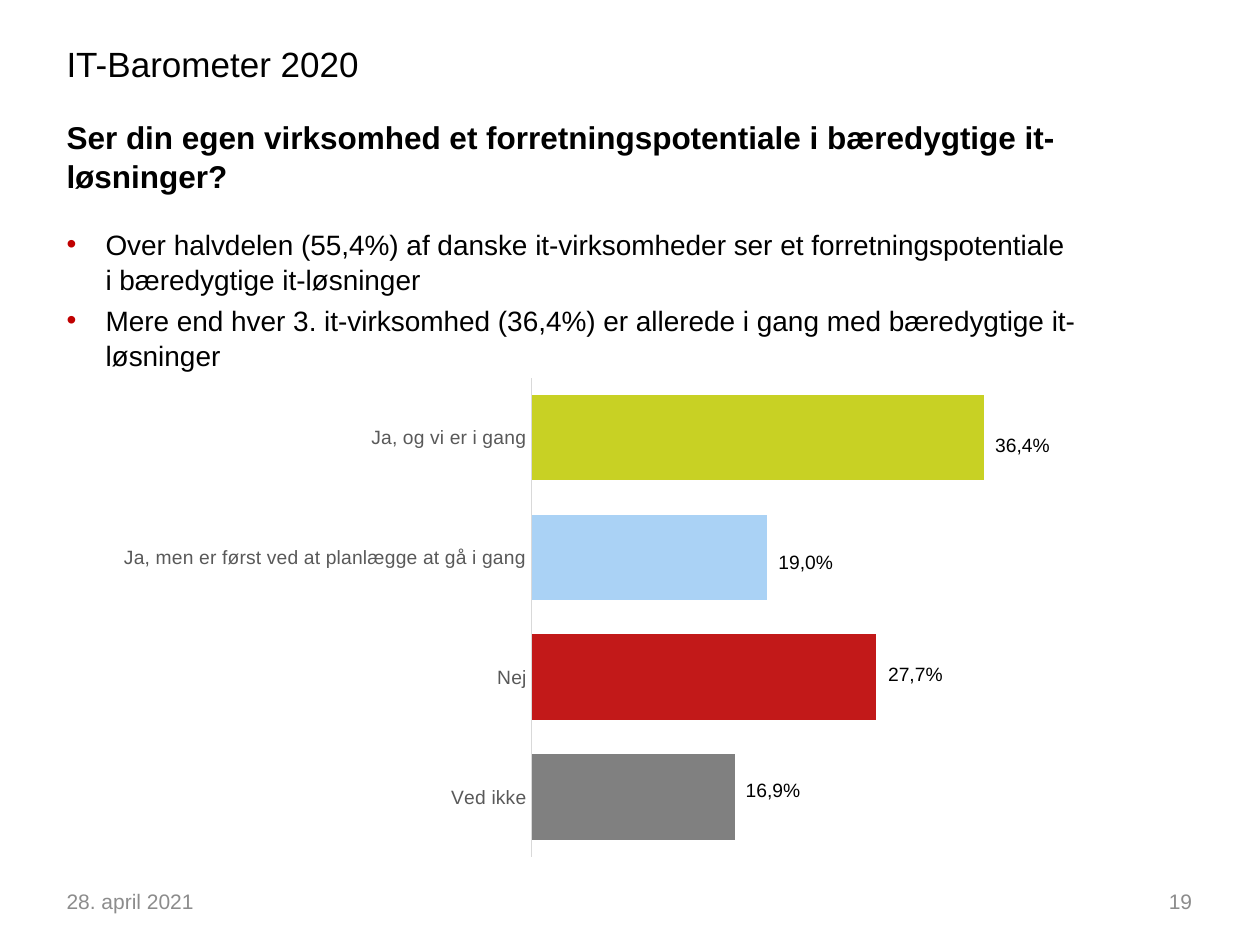
from lxml import etree
from pptx import Presentation
from pptx import util as u
from pptx.chart.data import CategoryChartData
from pptx.dml.color import RGBColor
from pptx.enum import chart as c
from pptx.enum import text as t
from pptx.oxml import parse_xml
from pptx.oxml.ns import nsdecls, qn

COLORS = {
    "text": "000000", "footer": "8C8C8C", "bullet": "C00000",
    "axis_text": "595959", "axis_line": "D9D9D9",
    "lime": "C8D124", "sky": "AAD2F5", "red": "C21919", "gray": "808080",
}


class SlideBuilder:
    """Holds the style and the slide being built."""

    font_name = "Arial"

    def __init__(self, slide):
        self.slide = slide

    def color(self, name):
        return RGBColor.from_string(COLORS[name])

    def style_font(self, font, size, color, bold=False):
        font.name = self.font_name
        font.size = u.Pt(size)
        font.bold = bold
        font.color.rgb = self.color(color)

    def text_box(self, box, lines, size, color="text", bold=False, wrap=True,
                 align=t.PP_ALIGN.LEFT, anchor=t.MSO_ANCHOR.TOP,
                 bullets=False, line_spacing=1.0):
        shape = self.slide.shapes.add_textbox(*map(u.Inches, box))
        frame = shape.text_frame
        frame.word_wrap = wrap
        frame.vertical_anchor = anchor
        for index, line in enumerate(lines):
            paragraph = frame.paragraphs[0] if index == 0 else frame.add_paragraph()
            if bullets:
                self.add_bullet(paragraph)
            paragraph.alignment = align
            paragraph.line_spacing = line_spacing
            if index:
                paragraph.space_before = u.Pt(0.2 * size)
            run = paragraph.add_run()
            run.text = line
            self.style_font(run.font, size, color, bold)

    def add_bullet(self, paragraph):
        properties = paragraph._p.get_or_add_pPr()
        indent = u.Inches(0.31)
        properties.set("marL", str(indent))
        properties.set("indent", str(-indent))
        bullet_color = etree.SubElement(properties, qn("a:buClr"))
        etree.SubElement(bullet_color, qn("a:srgbClr"), val=COLORS["bullet"])
        etree.SubElement(properties, qn("a:buFont"), typeface=self.font_name)
        etree.SubElement(properties, qn("a:buChar"), char="•")

    def bar_chart(self, box, bars, plot_area):
        data = CategoryChartData()
        data.categories = [label for label, _, _ in bars]
        data.add_series("Series 1", [value for _, value, _ in bars])
        chart = self.slide.shapes.add_chart(
            c.XL_CHART_TYPE.BAR_CLUSTERED, *map(u.Inches, box), data).chart
        chart.has_legend = False
        chart.has_title = False
        self.style_font(chart.font, 10, "text")

        # Bars, one colour each
        plot = chart.plots[0]
        plot.gap_width = 40
        plot.overlap = -25
        plot.vary_by_categories = False
        series = plot.series[0]
        for index, (_, _, color) in enumerate(bars):
            fill = series.points[index].format.fill
            fill.solid()
            fill.fore_color.rgb = self.color(color)

        # Axes
        category_axis = chart.category_axis
        category_axis.major_tick_mark = c.XL_TICK_MARK.NONE
        category_axis.format.line.color.rgb = self.color("axis_line")
        category_axis.format.line.width = u.Pt(0.75)
        self.style_font(category_axis.tick_labels.font, 11, "axis_text")
        value_axis = chart.value_axis
        value_axis.minimum_scale = 0
        value_axis.maximum_scale = 110
        value_axis.has_major_gridlines = False
        value_axis.visible = False

        # Fixed inner plot area, as fractions of the chart
        sizes = "".join(f'<c:{key} val="{value}"/>'
                        for key, value in zip("xywh", plot_area))
        layout = parse_xml(
            f'<c:layout {nsdecls("c")}><c:manualLayout>'
            '<c:layoutTarget val="inner"/><c:xMode val="edge"/>'
            f'<c:yMode val="edge"/>{sizes}</c:manualLayout></c:layout>')
        area = chart._chartSpace.chart.plotArea
        for old_layout in area.findall(qn("c:layout")):
            area.remove(old_layout)
        area.insert(0, layout)


def main():
    presentation = Presentation()
    presentation.slide_width = u.Inches(10)
    presentation.slide_height = u.Inches(7.5)
    slide = presentation.slides.add_slide(presentation.slide_layouts[6])
    builder = SlideBuilder(slide)

    # Chart, listed from the bottom bar up
    builder.bar_chart((0.84, 2.92, 7.46, 3.96), [
        ("Ved ikke", 45, "gray"),
        ("Nej", 76, "red"),
        ("Ja, men er først ved at planlægge at gå i gang", 52, "sky"),
        ("Ja, og vi er i gang", 100, "lime"),
    ], plot_area=(0.453, 0.02, 0.53, 0.96))

    # Headings and findings
    builder.text_box((0.43, 0.29, 3.17, 0.4), ["IT-Barometer 2020"], 20)
    builder.text_box(
        (0.43, 0.87, 9, 0.55),
        ["Ser din egen virksomhed et forretningspotentiale i bæredygtige it-løsninger?"],
        18, bold=True, line_spacing=1.05)
    builder.text_box((0.43, 1.74, 8.23, 1.22), [
        "Over halvdelen (55,4%) af danske it-virksomheder ser et "
        "forretningspotentiale i bæredygtige it-løsninger",
        "Mere end hver 3. it-virksomhed (36,4%) er allerede i gang med "
        "bæredygtige it-løsninger",
    ], 16, bullets=True, line_spacing=1.05)

    # Percentages beside the bars
    for label, left, top in [("36,4%", 7.8, 3.39), ("19,0%", 6.08, 4.32),
                             ("27,7%", 6.95, 5.21), ("16,9%", 5.82, 6.13)]:
        builder.text_box((left, top, 0.64, 0.29), [label], 11, wrap=False)

    # Footer
    for label, left, align in [("28. april 2021", 0.43, t.PP_ALIGN.LEFT),
                               ("19", 7.23, t.PP_ALIGN.RIGHT)]:
        builder.text_box((left, 6.95, 2.33, 0.4), [label], 12, "footer",
                         align=align, anchor=t.MSO_ANCHOR.MIDDLE)

    presentation.save("out.pptx")


if __name__ == "__main__":
    main()
